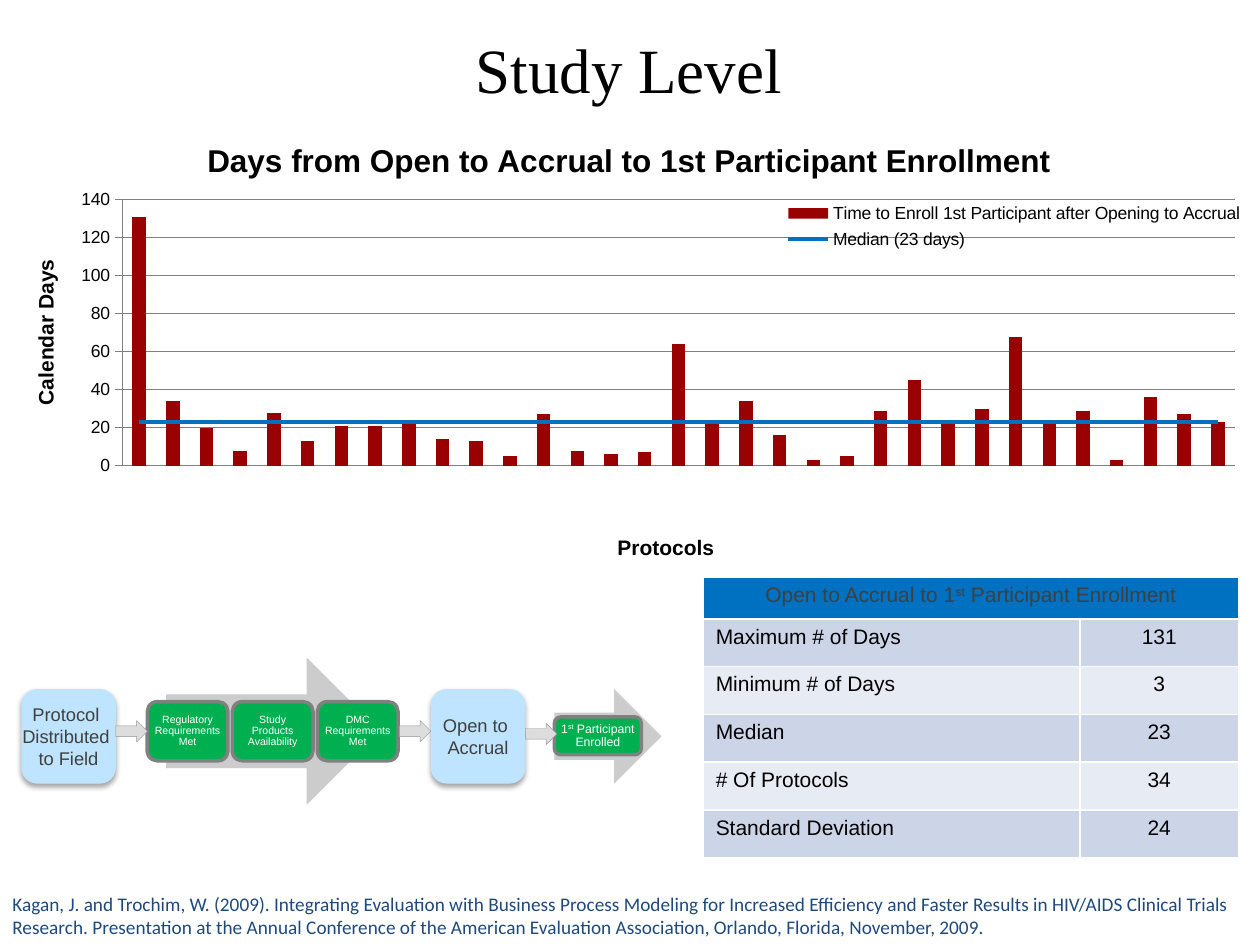
from lxml.etree import SubElement
from pptx import Presentation
from pptx.chart.data import CategoryChartData
from pptx.dml.color import RGBColor
from pptx.enum.chart import XL_CHART_TYPE, XL_LEGEND_POSITION, XL_TICK_MARK
from pptx.enum.shapes import MSO_SHAPE as Shape
from pptx.enum.text import MSO_ANCHOR as Anchor, PP_ALIGN as Align
from pptx.oxml import parse_xml
from pptx.oxml.ns import nsdecls, qn
from pptx.util import Pt

COLORS = dict(black="000000", white="FFFFFF", text="404040", bar="990000", blue="0070C0",
              band="CCD5E8", light="E7EBF4", arrow="CCCCCC", link="DDDDDD", link_line="969696",
              green="00B050", gray="808080", pale="BFE4FF", navy="1F497D")
TITLE = "Study Level"
CHART_TITLE = "Days from Open to Accrual to 1st Participant Enrollment"
BAR_NAME = "Time to Enroll 1st Participant after Opening to Accrual"
MEDIAN = 23
DAYS = [131, 34, 20, 8, 28, 13, 21, 21, 23, 14, 13, 5, 27, 8, 6, 7, 64, 22, 34, 16, 3, 5,
        29, 45, 24, 30, 68, 24, 29, 3, 36, 27, 23]
# Runs are (text, superscript) pairs
TABLE_HEADER = [("Open to Accrual to 1", False), ("st", True), (" Participant Enrollment", False)]
STATISTICS = [("Maximum # of Days", "131"), ("Minimum # of Days", "3"), ("Median", "23"),
              ("# Of Protocols", "34"), ("Standard Deviation", "24")]
MILESTONES = [(12.2, ["Protocol ", "Distributed ", "to Field"]),
              (246.2, ["Open to ", "Accrual"])]
STEPS = ["Regulatory Requirements Met", "Study Products Availability", "DMC Requirements Met"]
ENROLLED = [("1", False), ("st", True), (" Participant Enrolled", False)]
CITATION = ("Kagan, J. and Trochim, W. (2009). Integrating Evaluation with Business Process Modeling "
            "for Increased Efficiency and Faster Results in HIV/AIDS Clinical Trials Research. "
            "Presentation at the Annual Conference of the American Evaluation Association, "
            "Orlando, Florida, November, 2009.")


def rgb(name):
    return RGBColor.from_string(COLORS[name])


def style_font(font, size, color="black", name="Arial", bold=False):
    font.size, font.name, font.bold = Pt(size), name, bold
    font.color.rgb = rgb(color)


def write(paragraph, runs, size, color, align=Align.CENTER, name="Arial"):
    paragraph.alignment = align
    for text, superscript in runs:
        run = paragraph.add_run()
        run.text = text
        style_font(run.font, size, color, name)
        if superscript:
            run.font._element.set("baseline", "30000")


def add_block(kind, box, fill, line=None, line_width=0):
    shape = slide.shapes.add_shape(kind, *map(Pt, box))
    shape.shadow.inherit = False
    shape.fill.solid()
    shape.fill.fore_color.rgb = rgb(fill)
    if line:
        shape.line.color.rgb = rgb(line)
        shape.line.width = Pt(line_width)
    else:
        shape.line.fill.background()
    return shape


def add_step(box, runs, size):
    frame = add_block(Shape.ROUNDED_RECTANGLE, box, "green", "gray", 2).text_frame
    frame.word_wrap, frame.vertical_anchor = True, Anchor.MIDDLE
    frame.margin_left = frame.margin_right = frame.margin_top = frame.margin_bottom = Pt(2)
    frame.paragraphs[0].line_spacing = 0.9
    write(frame.paragraphs[0], runs, size, "white")


def add_milestone(left, lines):
    shape = add_block(Shape.ROUNDED_RECTANGLE, (left, 393.8, 54, 54), "pale")
    effects = shape._element.spPr.find(qn("a:effectLst"))
    shadow = SubElement(effects, qn("a:outerShdw"), blurRad=str(Pt(3.1)), dist=str(Pt(1.8)),
                        dir="5400000", rotWithShape="0")
    color = SubElement(shadow, qn("a:srgbClr"), val=COLORS["black"])
    SubElement(color, qn("a:alpha"), val="35000")
    frame = shape.text_frame
    frame.word_wrap, frame.vertical_anchor = False, Anchor.MIDDLE
    for index, line in enumerate(lines):
        paragraph = frame.add_paragraph() if index else frame.paragraphs[0]
        write(paragraph, [(line, False)], 10.5, "text")


def add_link(left, top):
    add_block(Shape.RIGHT_ARROW, (left, top, 18, 12.2), "link", "link_line", 0.25)


def layout_xml(x, y, w=None, h=None, inner=False):
    parts = '<c:layoutTarget val="inner"/>' if inner else ""
    parts += '<c:xMode val="edge"/><c:yMode val="edge"/>'
    for tag, value in zip("xywh", (x, y, w, h)):
        if value is not None:
            parts += f'<c:{tag} val="{value}"/>'
    return parse_xml(f'<c:layout {nsdecls("c")}><c:manualLayout>{parts}</c:manualLayout></c:layout>')


def set_layout(element, after, layout):
    for old in element.findall(qn("c:layout")):
        element.remove(old)
    if after is None:
        element.insert(0, layout)
    else:
        element.find(qn(after)).addnext(layout)


def set_title(owner, text, size, x, y):
    frame = (owner.chart_title if hasattr(owner, "chart_title") else owner.axis_title).text_frame
    run = frame.paragraphs[0].add_run()
    run.text = text
    style_font(run.font, size, bold=True)
    title = frame._txBody.getparent().getparent()
    set_layout(title, "c:tx", layout_xml(x, y))


presentation = Presentation()
presentation.slide_width, presentation.slide_height = Pt(720), Pt(540)
slide = presentation.slides.add_slide(presentation.slide_layouts[5])

# Title
title = slide.shapes.title
title.left, title.top, title.width, title.height = map(Pt, (263.5, 13.7, 191.5, 51.1))
title.text_frame.word_wrap = False
write(title.text_frame.paragraphs[0], [(TITLE, False)], 36, "black", name="Times New Roman")

# Chart: days as columns, median as a line
data = CategoryChartData()
data.categories = [str(number + 1) for number in range(len(DAYS))]
data.add_series(BAR_NAME, DAYS)
data.add_series(f"Median ({MEDIAN} days)", [MEDIAN] * len(DAYS))
chart = slide.shapes.add_chart(XL_CHART_TYPE.COLUMN_CLUSTERED, Pt(0), Pt(66.2), Pt(720), Pt(257.8), data).chart
style_font(chart.font, 10)
chart.has_title = True
set_title(chart, CHART_TITLE, 18, 0.16, 0.04)
columns = chart.plots[0]
columns.gap_width, columns.vary_by_categories = 150, False
bars, median = columns.series
bars.format.fill.solid()
bars.format.fill.fore_color.rgb = rgb("bar")

line_chart = parse_xml(f'<c:lineChart {nsdecls("c")}><c:grouping val="standard"/>'
                       '<c:varyColors val="0"/><c:marker val="1"/></c:lineChart>')
bar_chart = columns._element
series = median._element
for flag in series.findall(qn("c:invertIfNegative")):
    series.remove(flag)
line_chart.find(qn("c:varyColors")).addnext(series)
for axis_id in bar_chart.findall(qn("c:axId")):
    SubElement(line_chart, qn("c:axId"), val=axis_id.get("val"))
bar_chart.addnext(line_chart)
median = chart.plots[1].series[0]
median.format.line.color.rgb = rgb("blue")
median.format.line.width = Pt(2.25)
median.smooth = False
median.marker.style = None
marker = series.find(qn("c:marker"))
if marker is None:
    marker = series.get_or_add_marker()
SubElement(marker, qn("c:symbol"), val="none")

days_axis, protocol_axis = chart.value_axis, chart.category_axis
days_axis.minimum_scale, days_axis.maximum_scale, days_axis.major_unit = 0, 140, 20
days_axis.major_tick_mark = XL_TICK_MARK.CROSS
for line in (days_axis.format.line, days_axis.major_gridlines.format.line):
    line.color.rgb = rgb("gray")
    line.width = Pt(0.75)
set_title(days_axis, "Calendar Days", 12, 0.023, 0.31)
set_title(protocol_axis, "Protocols", 12, 0.487, 0.92)
protocol_axis.visible = False
set_layout(chart._chartSpace.chart.plotArea, None, layout_xml(0.097, 0.186, 0.883, 0.59, True))

chart.has_legend = True
chart.legend.position = XL_LEGEND_POSITION.RIGHT
chart.legend.include_in_layout = True
set_layout(chart.legend._element, "c:legendPos", layout_xml(0.62, 0.18, 0.37, 0.13))

# Statistics table
table = slide.shapes.add_table(len(STATISTICS) + 1, 2, Pt(401.8), Pt(329.8), Pt(306), Pt(160.6)).table
for column, width in zip(table.columns, (215.3, 90.7)):
    column.width = Pt(width)
for index, row in enumerate(table.rows):
    row.height = Pt(27.3 if index else 23.8)
header = table.cell(0, 0)
header.merge(table.cell(0, 1))
header.fill.solid()
header.fill.fore_color.rgb = rgb("blue")
write(header.text_frame.paragraphs[0], TABLE_HEADER, 12, "text")
for row, values in enumerate(STATISTICS, 1):
    for column, value in enumerate(values):
        cell = table.cell(row, column)
        cell.fill.solid()
        cell.fill.fore_color.rgb = rgb("band" if row % 2 else "light")
        write(cell.text_frame.paragraphs[0], [(value, False)], 12, "black",
              Align.CENTER if column else Align.LEFT)

# Process flow
add_block(Shape.RIGHT_ARROW, (95, 375.8, 122.4, 84.2), "arrow")
for index, step in enumerate(STEPS):
    add_step((84.2 + 48.6 * index, 401, 46.1, 33.8), [(step, False)], 6)
for left, lines in MILESTONES:
    add_milestone(left, lines)
add_block(Shape.RIGHT_ARROW, (316.8, 393.8, 61.2, 54), "arrow")
add_step((316.8, 409.7, 49.7, 21.6), ENROLLED, 7)
for left, top in ((66.2, 411.8), (228.2, 411.8), (300.2, 413.3)):
    add_link(left, top)

# Citation
frame = slide.shapes.add_textbox(Pt(0), Pt(506.2), Pt(720), Pt(33.8)).text_frame
frame.word_wrap, frame.vertical_anchor = True, Anchor.MIDDLE
write(frame.paragraphs[0], [(CITATION, False)], 11, "navy", Align.LEFT, "Calibri")

presentation.save("out.pptx")
